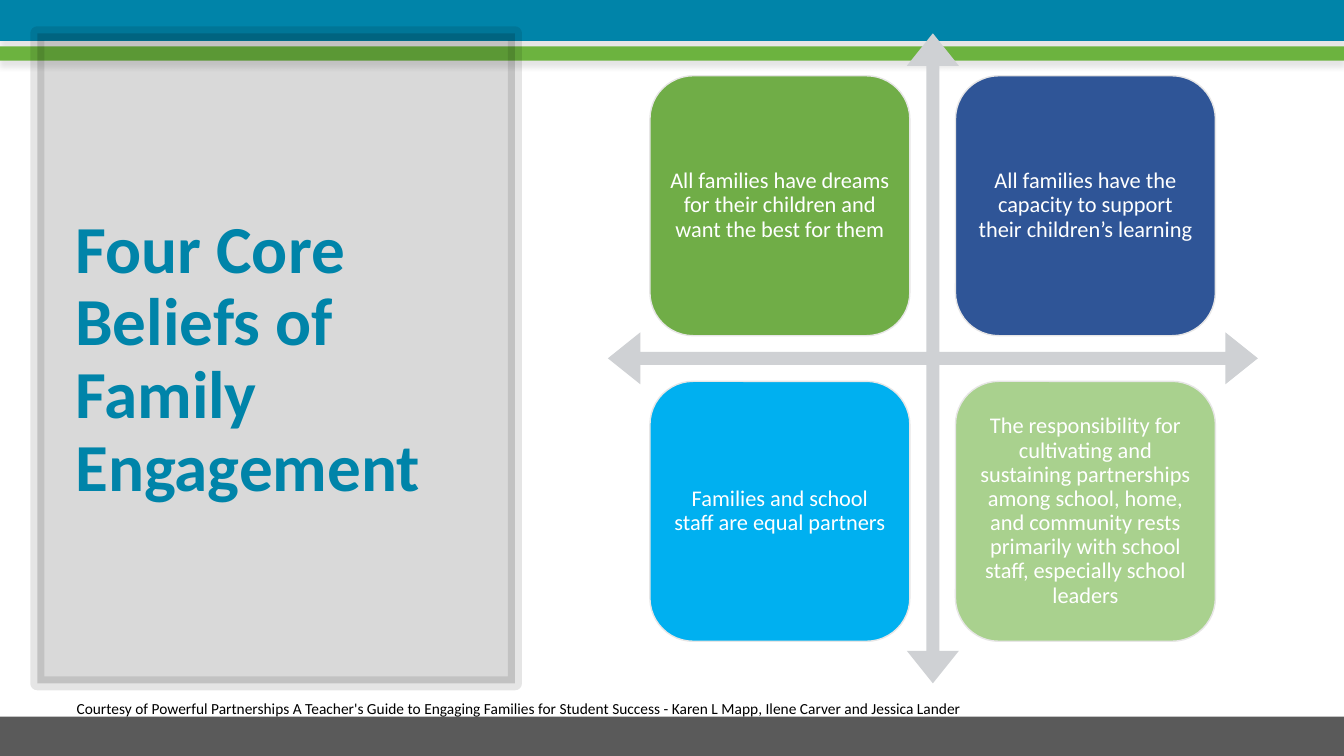
from lxml import etree
from pptx import Presentation
from pptx import util as u
from pptx.dml.color import RGBColor
from pptx.enum import shapes, text
from pptx.oxml.ns import qn

TITLE = "Four Core Beliefs of Family Engagement"
CREDIT = ("Courtesy of Powerful Partnerships A Teacher's Guide to Engaging Families "
          "for Student Success - Karen L Mapp, Ilene Carver and Jessica Lander")
BELIEFS = [
    ("All families have dreams for their children and want the best for them", "green"),
    ("All families have the capacity to support their children’s learning", "navy"),
    ("Families and school staff are equal partners", "sky"),
    ("The responsibility for cultivating and sustaining partnerships among school, home, "
     "and community rests primarily with school staff, especially school leaders", "mint"),
]
COLORS = {
    "teal": "0084A9", "lime": "6CB33F", "gray": "5A5A5A", "black": "000000",
    "white": "FFFFFF", "arrow": "CFD1D4", "edge": "E7E6E6",
    "green": "70AD47", "navy": "2F5597", "sky": "00B0F0", "mint": "A9D18E",
}
FONT = "Calibri"
WIDTH, HEIGHT = 33.87, 19.05
BANDS = [  # top, height, fill, outline, has shadow
    (0, 1.02, "teal", "teal", True),
    (1.17, 0.36, "lime", None, True),
    (18.06, 0.99, "gray", None, False),
]
PANEL = (0.94, 0.84, 12.04, 16.38)
TITLE_AT = (1.65, 1.78, 10.57, 14.61)
CREDIT_AT = (1.68, 17.48, 29.16, 0.97)
ARROWS_AT = (15.32, 0.84, 16.38, 16.38)
CARD_LEFT, CARD_TOP, CARD_SIZE, CARD_PITCH = 16.38, 1.91, 6.55, 7.7


def rgb(name):
    return RGBColor.from_string(COLORS[name])


def set_alpha(color_format_fill, percent):
    """Make a solid fill element partly transparent."""
    color = color_format_fill.find(".//" + qn("a:srgbClr"))
    etree.SubElement(color, qn("a:alpha"), val=str(percent * 1000))


def add_soft_shadow(shape):
    effects = shape._element.spPr.find(qn("a:effectLst"))
    shadow = etree.SubElement(effects, qn("a:outerShdw"), blurRad=str(u.Pt(4)),
                              dist=str(u.Pt(4)), dir="5400000", rotWithShape="0")
    color = etree.SubElement(shadow, qn("a:srgbClr"), val=COLORS["black"])
    etree.SubElement(color, qn("a:alpha"), val="9000")


def add_block(page, kind, at, fill, outline=None, weight=1):
    shape = page.shapes.add_shape(kind, *map(u.Cm, at))
    shape.shadow.inherit = False
    shape.fill.solid()
    shape.fill.fore_color.rgb = rgb(fill)
    if outline:
        shape.line.color.rgb = rgb(outline)
        shape.line.width = u.Pt(weight)
    else:
        shape.line.fill.background()
    return shape


def write(shape, words, size, color, bold=False, align=text.PP_ALIGN.LEFT,
          anchor=text.MSO_ANCHOR.MIDDLE, spacing=0.9):
    frame = shape.text_frame
    frame.word_wrap = True
    frame.vertical_anchor = anchor
    para = frame.paragraphs[0]
    para.alignment = align
    para.line_spacing = spacing
    span = para.add_run()
    span.text = words
    span.font.name = FONT
    span.font.size = u.Pt(size)
    span.font.bold = bold
    span.font.color.rgb = rgb(color)
    return frame


def main():
    deck = Presentation()
    deck.slide_width, deck.slide_height = u.Cm(WIDTH), u.Cm(HEIGHT)
    page = deck.slides.add_slide(deck.slide_layouts[6])
    kinds = shapes.MSO_SHAPE

    for top, height, fill, outline, has_shadow in BANDS:
        band = add_block(page, kinds.RECTANGLE, (0, top, WIDTH, height), fill, outline)
        if has_shadow:
            add_soft_shadow(band)

    panel = add_block(page, kinds.RECTANGLE, PANEL, "black", "black", 10)
    properties = panel._element.spPr
    set_alpha(properties.find(qn("a:solidFill")), 15)
    set_alpha(properties.find(qn("a:ln")), 10)

    title = page.shapes.add_textbox(*map(u.Cm, TITLE_AT))
    write(title, TITLE, 48, "teal", bold=True)

    arrows = add_block(page, kinds.QUAD_ARROW, ARROWS_AT, "arrow")
    for index, share in enumerate((0.02, 0.04, 0.05)):
        arrows.adjustments[index] = share

    for index, (belief, fill) in enumerate(BELIEFS):
        row, column = divmod(index, 2)
        at = (CARD_LEFT + column * CARD_PITCH, CARD_TOP + row * CARD_PITCH,
              CARD_SIZE, CARD_SIZE)
        card = add_block(page, kinds.ROUNDED_RECTANGLE, at, fill, "edge")
        frame = write(card, belief, 16, "white", align=text.PP_ALIGN.CENTER)
        frame.margin_left = frame.margin_right = u.Cm(0.18)
        frame.margin_top = frame.margin_bottom = u.Cm(0.18)

    credit = page.shapes.add_textbox(*map(u.Cm, CREDIT_AT))
    write(credit, CREDIT, 11, "black", anchor=text.MSO_ANCHOR.TOP, spacing=1.0)

    deck.save("out.pptx")


if __name__ == "__main__":
    main()
